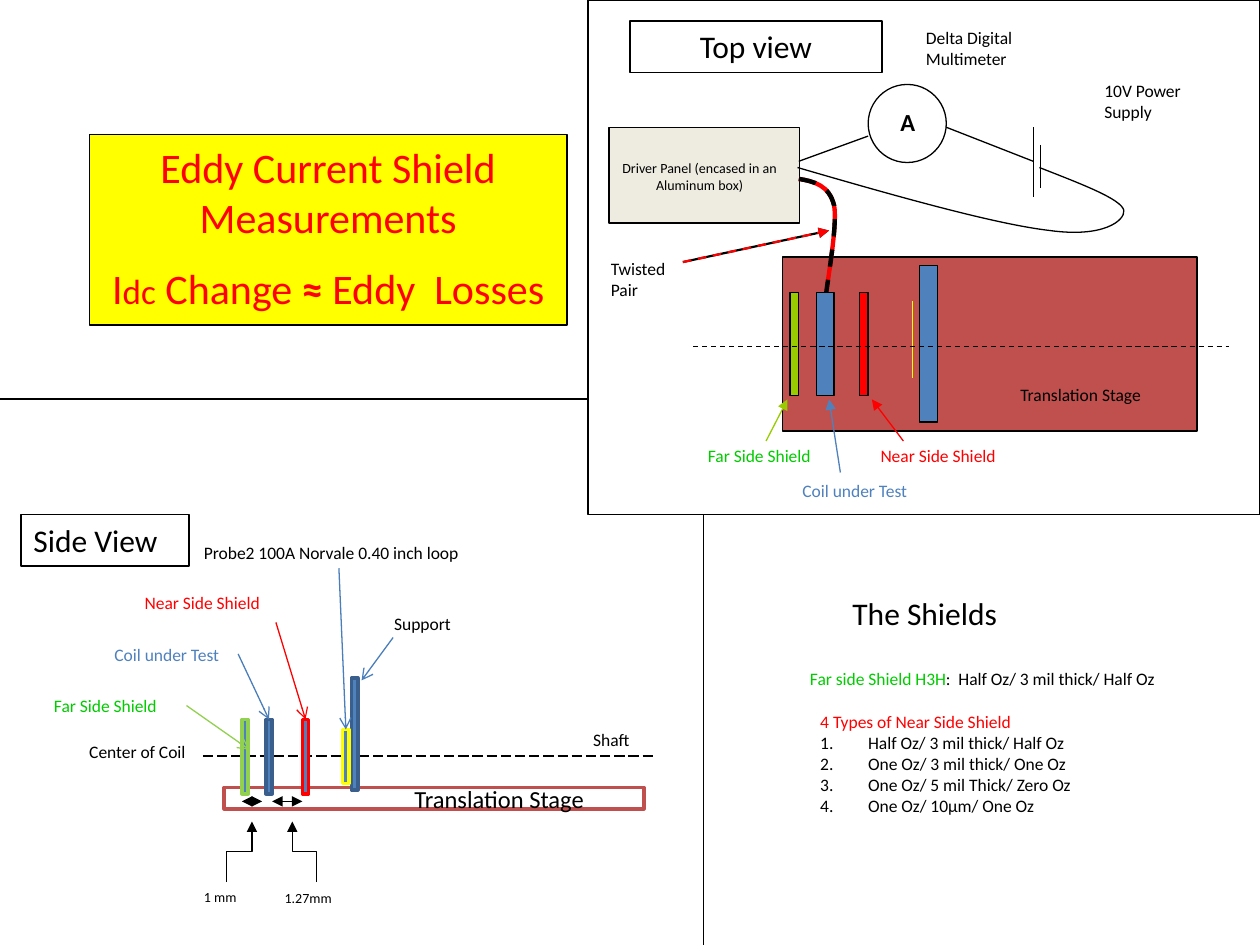
from dataclasses import dataclass
from typing import Optional

import pptx
import pptx.dml.color
import pptx.enum.dml
import pptx.enum.shapes
import pptx.enum.text
import pptx.oxml
import pptx.oxml.ns
import pptx.util

BLACK, RED, GREEN, BLUE, YELLOW = "000000", "FF0000", "00CC00", "4F81BD", "FFFF00"
BRICK, LIME, LIGHT_GREEN, NAVY, SKY = "C0504D", "99CC00", "92D050", "3A5F8C", "4A7EBB"
LEFT, CENTER = pptx.enum.text.PP_ALIGN.LEFT, pptx.enum.text.PP_ALIGN.CENTER
TOP, MIDDLE = pptx.enum.text.MSO_ANCHOR.TOP, pptx.enum.text.MSO_ANCHOR.MIDDLE
DASH, LONG_DASH = pptx.enum.dml.MSO_LINE.DASH, pptx.enum.dml.MSO_LINE.LONG_DASH
RECTANGLE, OVAL = pptx.enum.shapes.MSO_SHAPE.RECTANGLE, pptx.enum.shapes.MSO_SHAPE.OVAL
PANEL_LEFT, PANEL_BOTTOM = 56 / 12, 49 / 12
DIVIDER_X, DIVIDER_Y = 67 / 12, 38 / 12
Point = tuple[float, float]
Box = tuple[float, float, float, float]


@dataclass
class Label:
    text: str
    at: Box
    color: str = BLACK
    size: float = 10
    wrap: bool = True
    bold: bool = False
    align: int = LEFT
    anchor: int = TOP


@dataclass
class Part:
    at: Box
    fill: Optional[str] = None
    line: str = BLACK
    width: float = 0.75
    outline: int = RECTANGLE


@dataclass
class Wire:
    start: Point
    end: Point
    color: str = BLACK
    width: float = 0.75
    dash: Optional[int] = None
    head: Optional[str] = None
    tail: Optional[str] = None
    target: Optional[str] = None


def inch(value: float) -> pptx.util.Length:
    return pptx.util.Cm(value * 2.54)


def rgb(color: str):
    return pptx.dml.color.RGBColor.from_string(color)


def element(tag: str, attributes: str = ""):
    return pptx.oxml.parse_xml(f'<a:{tag} {pptx.oxml.ns.nsdecls("a")} {attributes}/>')


def write(paragraph, text: str, *, size=10, color=BLACK, bold=False, align=LEFT, before=0):
    paragraph.alignment = align
    paragraph.space_before = pptx.util.Pt(before)
    run = paragraph.add_run()
    run.text = text
    run.font.name = "Calibri"
    run.font.size = pptx.util.Pt(size)
    run.font.bold = bold
    run.font.color.rgb = rgb(color)


def place(shape, at: Box) -> None:
    shape.left, shape.top, shape.width, shape.height = map(inch, at)


def paint(shape, fill: Optional[str], line: str, width: float) -> None:
    if fill:
        shape.fill.solid()
        shape.fill.fore_color.rgb = rgb(fill)
    else:
        shape.fill.background()
    shape.line.color.rgb = rgb(line)
    shape.line.width = pptx.util.Pt(width)


def draw_label(slide, label: Label) -> None:
    frame = slide.shapes.add_textbox(*map(inch, label.at)).text_frame
    frame.word_wrap = label.wrap
    frame.vertical_anchor = label.anchor
    write(frame.paragraphs[0], label.text, size=label.size, color=label.color,
          bold=label.bold, align=label.align)


def draw_part(slide, part: Part):
    shape = slide.shapes.add_shape(part.outline, *map(inch, part.at))
    shape.shadow.inherit = False
    paint(shape, part.fill, part.line, part.width)
    return shape


def draw_heading(slide, text: str, at: Box, align=CENTER) -> None:
    frame = draw_part(slide, Part(at)).text_frame
    frame.word_wrap = True
    frame.vertical_anchor = TOP
    write(frame.paragraphs[0], text, size=18, align=align)


def draw_wire(slide, wire: Wire, kind=pptx.enum.shapes.MSO_CONNECTOR.STRAIGHT):
    connector = slide.shapes.add_connector(kind, *map(inch, wire.start + wire.end))
    connector.line.color.rgb = rgb(wire.color)
    connector.line.width = pptx.util.Pt(wire.width)
    if wire.dash:
        connector.line.dash_style = wire.dash
    properties = connector._element.spPr
    for tag, tip in (("headEnd", wire.head), ("tailEnd", wire.tail)):
        if tip:
            properties.find(pptx.oxml.ns.qn("a:ln")).append(element(tag, f'type="{tip}"'))
    properties.append(element("effectLst"))
    return connector


def draw_rising_elbow(slide, start: Point, end: Point) -> None:
    middle_x, middle_y = (start[0] + end[0]) / 2, (start[1] + end[1]) / 2
    rightward = end[0] > start[0]
    reach = (start[1] - end[1]) / 2 * (1 if rightward else -1)
    drift = abs(end[0] - start[0]) / 2
    elbow = Wire((middle_x - reach, middle_y - drift), (middle_x + reach, middle_y + drift),
                 tail="triangle")
    connector = draw_wire(slide, elbow, pptx.enum.shapes.MSO_CONNECTOR.ELBOW)
    frame = connector._element.spPr.find(pptx.oxml.ns.qn("a:xfrm"))
    frame.set("rot", str((270 if rightward else 90) * 60000))


def draw_curve(slide, start: Point, bends: list, color=BLACK, width=0.75, dash=None) -> None:
    builder = slide.shapes.build_freeform(*map(inch, start))
    builder.add_line_segments([tuple(map(inch, point)) for bend in bends for point in bend],
                              close=False)
    curve = builder.convert_to_shape()
    segments = curve._element.findall(".//" + pptx.oxml.ns.qn("a:lnTo"))
    outline = segments[0].getparent()
    for first in range(0, len(segments), 3):
        bezier = element("cubicBezTo")
        for segment in segments[first:first + 3]:
            bezier.append(segment[0])
            outline.remove(segment)
        outline.append(bezier)
    curve.shadow.inherit = False
    paint(curve, None, color, width)
    if dash:
        curve.line.dash_style = dash


def fill_title(title) -> None:
    place(title, (0.71, 1.07, 3.79, 1.51))
    paint(title, YELLOW, BLACK, 0.75)
    frame = title.text_frame
    frame.auto_size = pptx.enum.text.MSO_AUTO_SIZE.NONE
    frame.vertical_anchor = TOP
    write(frame.paragraphs[0], "Eddy Current Shield Measurements", size=24, color=RED, align=CENTER)
    formula = frame.add_paragraph()
    for text, size, bold in (("I", 24, False), ("dc", 20, False), (" Change ", 24, False),
                             ("≈", 24, True), (" Eddy  Losses", 24, False)):
        write(formula, text, size=size, color=RED, bold=bold, align=CENTER, before=12)


def fill_shield_list(body) -> None:
    place(body, (6.41, 5.59, 2.37, 0.93))
    frame = body.text_frame
    frame.auto_size = pptx.enum.text.MSO_AUTO_SIZE.NONE
    frame.word_wrap = False
    shields = ["4 Types of Near Side Shield", "Half Oz/ 3 mil thick/ Half Oz",
               "One Oz/ 3 mil thick/ One Oz", "One Oz/ 5 mil Thick/ Zero Oz", "One Oz/ 10μm/ One Oz"]
    for index, text in enumerate(shields):
        paragraph = frame.add_paragraph() if index else frame.paragraphs[0]
        write(paragraph, text, color=BLACK if index else RED)
        properties = paragraph._p.get_or_add_pPr()
        properties.set("marL", str(inch(0.38)))
        properties.set("indent", str(-inch(0.38)))
        if index:
            properties.append(element("buFont", 'typeface="+mj-lt"'))
            properties.append(element("buAutoNum", 'type="arabicPeriod"'))
        else:
            properties.append(element("buNone"))


def draw_shields(slide) -> None:
    draw_label(slide, Label("The Shields", (80 / 12, 56 / 12, 2.42, 0.4), size=18))
    frame = slide.shapes.add_textbox(*map(inch, (6.33, 5.25, 3.25, 0.27))).text_frame
    frame.word_wrap = False
    write(frame.paragraphs[0], "Far side Shield H3H", color=GREEN)
    write(frame.paragraphs[0], ":  Half Oz/ 3 mil thick/ Half Oz")


def draw_side_view(slide) -> None:
    draw_part(slide, Part((1.78, 6.25, 3.33, 0.17), line=BRICK, width=2))
    draw_wire(slide, Wire((1.61, 6), (5.19, 6), dash=LONG_DASH))
    bars = {name: draw_part(slide, Part((left, top, 0.05, height), BLUE, line, 2))
            for name, left, top, height, line in (
                ("coil", 2.11, 5.71, 0.59, NAVY), ("support", 2.79, 5.38, 0.89, NAVY),
                ("probe", 2.72, 5.79, 0.43, YELLOW), ("far", 1.92, 5.71, 0.59, LIGHT_GREEN),
                ("near", 2.4, 5.71, 0.59, RED))}
    for label in (
            Label("Translation Stage", (3.19, 6.17, 1.72, 0.33), size=14, wrap=False),
            Label("Shaft", (4.61, 5.74, 0.74, 0.27)),
            Label("Coil under Test", (0.81, 5.06, 1.14, 0.27), BLUE, wrap=False),
            Label("Center of Coil", (0.61, 5.83, 1.05, 0.27), wrap=False),
            Label("Probe2 100A Norvale 0.40 inch loop", (1.52, 4.25, 2.44, 0.27), wrap=False),
            Label("Support", (3.03, 4.82, 0.7, 0.27)),
            Label("Far Side Shield", (0.33, 5.47, 1.15, 0.27), GREEN, wrap=False),
            Label("Near Side Shield", (1.05, 4.65, 1.24, 0.27), RED, wrap=False),
            Label("1 mm", (1.52, 7, 0.56, 0.23), size=8),
            Label("1.27mm", (2.16, 7.01, 0.71, 0.23), size=8)):
        draw_label(slide, label)
    for pointer in (
            Wire((3.12, 5.06), (2.87, 5.4), SKY, tail="arrow"),
            Wire((2.69, 4.51), (2.74, 5.77), SKY, tail="arrow", target="probe"),
            Wire((1.89, 5.19), (2.14, 5.69), SKY, tail="arrow", target="coil"),
            Wire((1.48, 5.6), (1.98, 5.95), LIGHT_GREEN, tail="arrow"),
            Wire((2.19, 4.94), (2.42, 5.69), RED, tail="arrow", target="near")):
        connector = draw_wire(slide, pointer)
        if pointer.target:
            connector.end_connect(bars[pointer.target], 0)
    for left, right in ((1.92, 2.08), (2.16, 2.4)):
        draw_wire(slide, Wire((left, 6.36), (right, 6.36), width=0.25,
                              head="triangle", tail="triangle"))
    draw_rising_elbow(slide, (1.8, 7), (2, 6.52))
    draw_rising_elbow(slide, (2.51, 7), (2.32, 6.52))
    draw_heading(slide, "Side View", (2 / 12, PANEL_BOTTOM, 16 / 12, 0.41), LEFT)


def draw_top_view(slide) -> None:
    for part in (Part((PANEL_LEFT, 0, 10 - PANEL_LEFT, PANEL_BOTTOM)),
                 Part((58 / 12, 1.01, 1.51, 0.76), "EEECE1"),
                 Part((6.21, 2.04, 3.29, 1.38), BRICK), Part((6.89, 0.67, 0.62, 0.62), outline=OVAL)):
        draw_part(slide, part)
    draw_heading(slide, "Top view", (5, 2 / 12, 2, 0.41))
    cable = [((6.46, 1.44), (6.58, 1.47), (6.62, 1.63)), ((6.65, 1.79), (6.56, 2.26), (6.55, 2.39))]
    for color, dash in ((RED, None), (BLACK, DASH)):
        draw_curve(slide, (6.34, 1.42), cable, color, 2.5, dash)
    draw_curve(slide, (6.33, 1.33), [((7.12, 1.56), (7.9, 1.78), (8.33, 1.83)),
                                     ((8.76, 1.89), (8.93, 1.75), (8.92, 1.67)),
                                     ((8.9, 1.58), (8.58, 1.46), (8.25, 1.33))])
    for part in (Part((7.3, 2.11, 0.14, 1.24), BLUE), Part((6.48, 2.32, 0.14, 0.82), BLUE),
                 Part((6.27, 2.32, 0.07, 0.82), LIME), Part((6.82, 2.32, 0.07, 0.82), RED)):
        draw_part(slide, part)
    for wire in (
            Wire((8.2, 1.01), (8.2, 1.56)), Wire((8.26, 1.15), (8.26, 1.49)),
            Wire((8.2, 1.28), (7.51, 1.01)), Wire((6.89, 1.08), (6.34, 1.28)),
            Wire((6.34, 2.32), (6.34, 3.14)), Wire((6.82, 2.32), (6.82, 3.14)),
            Wire((7.24, 2.39), (7.24, 3), YELLOW),
            Wire((6.08, 3.5), (6.25, 3.17), LIME, tail="triangle"),
            Wire((6.67, 3.75), (6.58, 3.17), BLUE, tail="triangle"),
            Wire((7.17, 3.5), (6.92, 3.17), RED, tail="triangle"),
            Wire((5.5, 2.75), (9.75, 2.75), dash=DASH),
            Wire((5.42, 2.08), (6.58, 1.83), width=1.25, tail="triangle"),
            Wire((5.42, 2.08), (6.58, 1.83), RED, 1.25, DASH, tail="triangle")):
        draw_wire(slide, wire)
    for label in (
            Label("Twisted Pair", (4.75, 2, 0.75, 0.43)),
            Label("Driver Panel (encased in an Aluminum box)", (58 / 12, 1.22, 1.44, 0.37),
                  size=8, align=CENTER),
            Label("A", (7, 0.8, 0.41, 0.33), size=14, bold=True, align=CENTER, anchor=MIDDLE),
            Label("Near Side Shield", (6.89, 3.48, 1.24, 0.27), RED, wrap=False),
            Label("Coil under Test", (6.27, 3.76, 1.14, 0.27), BLUE, wrap=False),
            Label("Far Side Shield", (5.52, 3.48, 1.15, 0.27), GREEN, wrap=False),
            Label("10V Power Supply", (104 / 12, 7 / 12, 0.83, 0.6)),
            Label("Delta Digital Multimeter", (7.25, 2 / 12, 0.92, 0.6)),
            Label("Translation Stage", (8, 3, 1.5, 0.27))):
        draw_label(slide, label)


def main() -> None:
    deck = pptx.Presentation()
    deck.slide_width, deck.slide_height = inch(10), inch(7.5)
    slide = deck.slides.add_slide(deck.slide_layouts[1])
    fill_title(slide.shapes.title)
    fill_shield_list(slide.placeholders[1])
    draw_shields(slide)
    draw_side_view(slide)
    for divider in (Wire((0, DIVIDER_Y), (PANEL_LEFT, DIVIDER_Y)),
                    Wire((DIVIDER_X, PANEL_BOTTOM), (DIVIDER_X, 7.5))):
        draw_wire(slide, divider)
    draw_top_view(slide)
    deck.save("out.pptx")


if __name__ == "__main__":
    main()
